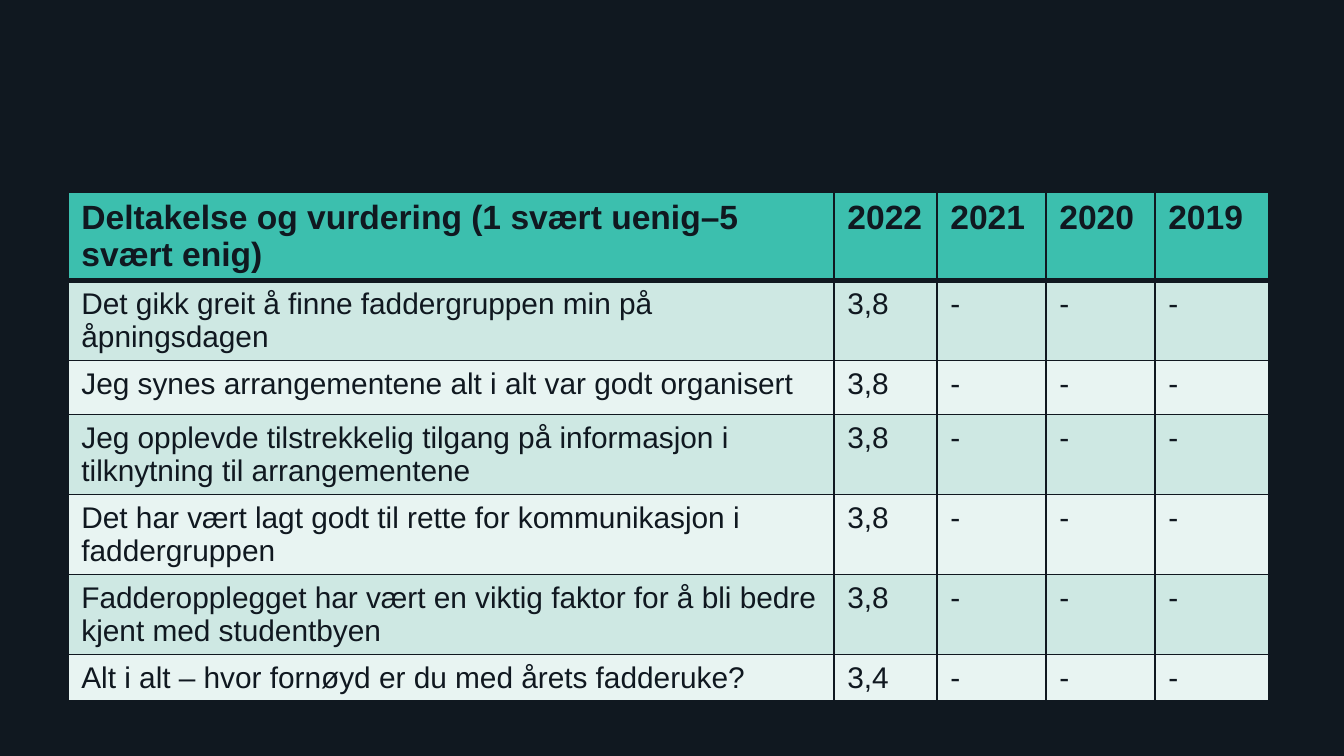
from dataclasses import dataclass

from lxml.etree import SubElement
from pptx import Presentation
from pptx.dml.color import RGBColor
from pptx.oxml.ns import qn
from pptx.util import Pt

SCALE = 914400 / 134.4  # EMU in one px


@dataclass(frozen=True)
class Theme:
    font: str = "Arial"
    dark: str = "101820"
    head: str = "3CBFAE"
    odd: str = "CEE8E3"
    even: str = "E8F4F2"
    big: int = 18
    small: int = 16
    thin: int = 1
    thick: int = 3


THEME = Theme()
HEADS = ["Deltakelse og vurdering (1 svært uenig–5 svært enig)",
         "2022", "2021", "2020", "2019"]
SCORES = [
    ("Det gikk greit å finne faddergruppen min på åpningsdagen", "3,8"),
    ("Jeg synes arrangementene alt i alt var godt organisert", "3,8"),
    ("Jeg opplevde tilstrekkelig tilgang på informasjon i "
     "tilknytning til arrangementene", "3,8"),
    ("Det har vært lagt godt til rette for kommunikasjon i "
     "faddergruppen", "3,8"),
    ("Fadderopplegget har vært en viktig faktor for å bli bedre "
     "kjent med studentbyen", "3,8"),
    ("Alt i alt – hvor fornøyd er du med årets fadderuke?", "3,4"),
]
WIDTHS = [766, 103, 109, 109, 114]
HEIGHTS = [88, 80, 54, 80, 80, 80, 46]


def px(n):
    return round(n * SCALE)


def write(frame, text, size=THEME.small, bold=False, color=THEME.dark):
    para = frame.paragraphs[0]
    run = para.add_run()
    run.text = text
    font = run.font
    font.name, font.size, font.bold = THEME.font, Pt(size), bold
    font.color.rgb = RGBColor.from_string(color)


def edge(cell, **sides):
    """Draw cell borders; each side (L, R, T, B) gives a width in points."""
    props = cell._tc.get_or_add_tcPr()
    for side, width in sides.items():
        line = SubElement(props, qn(f"a:ln{side}"), w=str(Pt(width)))
        fill = SubElement(line, qn("a:solidFill"))
        SubElement(fill, qn("a:srgbClr"), val=THEME.dark)


def paint(cell, color):
    cell.fill.solid()
    cell.fill.fore_color.rgb = RGBColor.from_string(color)


def score_table(slide, left, top):
    rows = [HEADS] + [[ask, score, "-", "-", "-"] for ask, score in SCORES]
    box = [px(n) for n in (left, top, sum(WIDTHS), sum(HEIGHTS))]
    table = slide.shapes.add_table(len(rows), len(HEADS), *box).table
    for col, width in zip(table.columns, WIDTHS):
        col.width = px(width)
    for i, row in enumerate(rows):
        table.rows[i].height = px(HEIGHTS[i])
        head = i == 0
        fill = THEME.head if head else THEME.odd if i % 2 else THEME.even
        size = THEME.big if head else THEME.small
        for j, text in enumerate(row):
            cell = table.cell(i, j)
            # The heavy rule is shared by the header and the first row
            edge(cell, L=THEME.thin, R=THEME.thin,
                 T=THEME.thick if i == 1 else THEME.thin,
                 B=THEME.thick if head else THEME.thin)
            paint(cell, fill)
            write(cell.text_frame, text, size=size, bold=head)


def main():
    deck = Presentation()
    deck.slide_width, deck.slide_height = px(1344), px(756)
    slide = deck.slides.add_slide(deck.slide_layouts[6])

    # Dark backdrop
    back = slide.background.fill
    back.solid()
    back.fore_color.rgb = RGBColor.from_string(THEME.dark)

    # Survey scores
    score_table(slide, 68, 192)
    deck.save("out.pptx")


if __name__ == "__main__":
    main()
